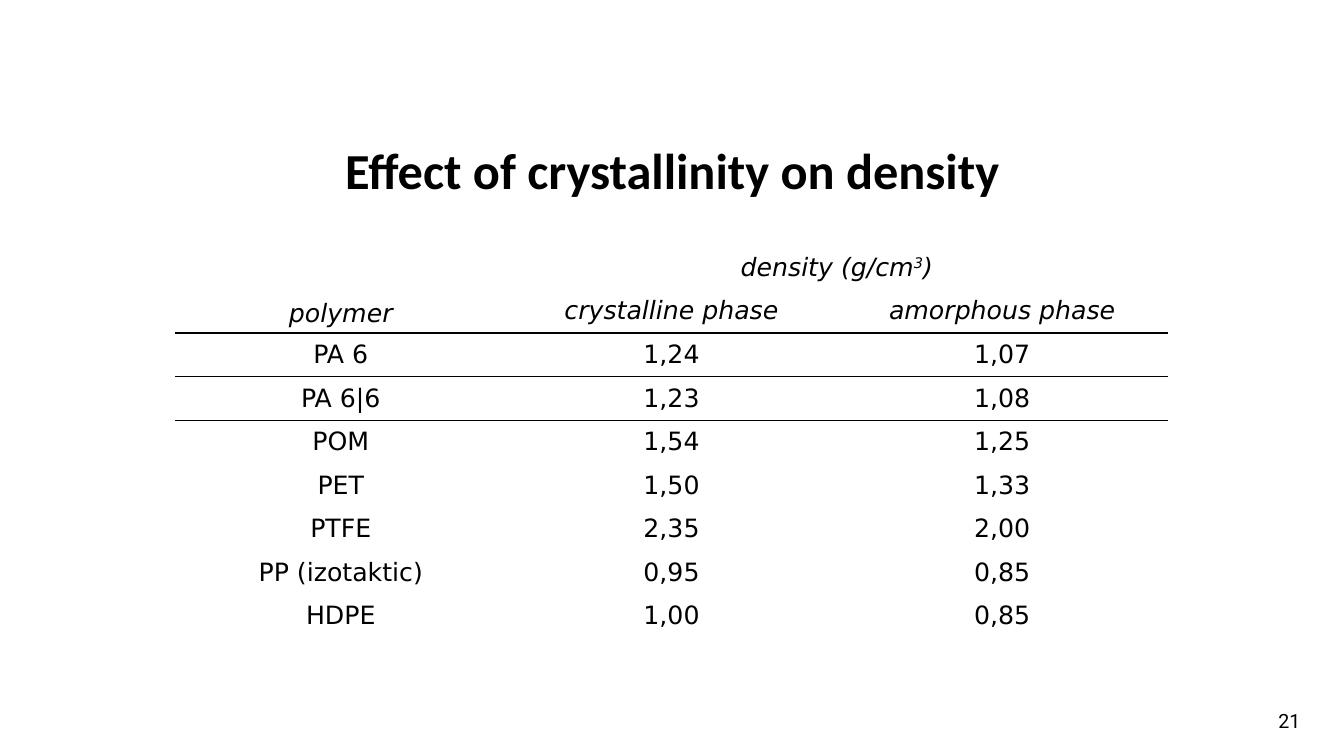
from lxml.etree import SubElement
from pptx import Presentation
from pptx.dml.color import RGBColor
from pptx.enum.text import MSO_ANCHOR as ANCHOR, PP_ALIGN as ALIGN
from pptx.oxml.ns import qn
from pptx.util import Inches, Pt

# Content
TITLE = "Effect of crystallinity on density"
PAGE = "21"
UNIT = ("density (g/cm", "3", ")")
HEADS = ("polymer", "crystalline phase", "amorphous phase")
ROWS = [
    ("PA 6", "1,24", "1,07"),
    ("PA 6|6", "1,23", "1,08"),
    ("POM", "1,54", "1,25"),
    ("PET", "1,50", "1,33"),
    ("PTFE", "2,35", "2,00"),
    ("PP (izotaktic)", "0,95", "0,85"),
    ("HDPE", "1,00", "0,85"),
]
INK, PAPER = "000000", "FFFFFF"
NO_STYLE = "{2D5ABB26-0587-4C30-8999-92F81FD0307C}"

# Grid, in inches
SLIDE_W, SLIDE_H = 13.33, 7.5
TABLE_X, TABLE_Y, COL_W, ROW_H = 1.74, 2.44, 3.28, 0.432
HEAD_ROWS = 2
N_ROWS, N_COLS = HEAD_ROWS + len(ROWS), len(HEADS)


def color(hex_code):
    return RGBColor.from_string(hex_code)


def style(p, font, size, bold=False, italic=False):
    p.alignment = ALIGN.CENTER
    f = p.font
    f.name, f.size, f.bold, f.italic = font, Pt(size), bold, italic
    f.color.rgb = color(INK)


def rule(cell, side):
    ln = SubElement(cell._tc.get_or_add_tcPr(), qn("a:" + side), w=str(Pt(1)))
    SubElement(SubElement(ln, qn("a:solidFill")), qn("a:srgbClr"), val=INK)


prs = Presentation()
prs.slide_width, prs.slide_height = Inches(SLIDE_W), Inches(SLIDE_H)
s = prs.slides.add_slide(prs.slide_layouts[5])

# Title
title = s.shapes.title
title.left, title.top, title.width, title.height = map(Inches, (0.92, 0.99, 11.5, 1.45))
tf = title.text_frame
tf.text, tf.vertical_anchor = TITLE, ANCHOR.MIDDLE
tf.paragraphs[0].line_spacing = 0.9
style(tf.paragraphs[0], "Calibri", 36, bold=True)

# Table
frame = s.shapes.add_table(N_ROWS, N_COLS, Inches(TABLE_X), Inches(TABLE_Y),
                           Inches(COL_W * N_COLS), Inches(ROW_H * N_ROWS))
table = frame.table
table.first_row = table.horz_banding = False
table._tbl.tblPr.find(qn("a:tableStyleId")).text = NO_STYLE
for row in table.rows:
    row.height = Inches(ROW_H)
for column in table.columns:
    column.width = Inches(COL_W)
table.cell(0, 0).merge(table.cell(1, 0))
table.cell(0, 1).merge(table.cell(0, 2))

texts = [(HEADS[0], UNIT, ""), ("", *HEADS[1:]), *ROWS]
for i, row in enumerate(texts):
    for j, text in enumerate(row):
        cell = table.cell(i, j)
        # Lines above and below the first polymer
        if i in (HEAD_ROWS, HEAD_ROWS + 1):
            rule(cell, "lnT")
        if i in (HEAD_ROWS - 1, HEAD_ROWS):
            rule(cell, "lnB")
        cell.fill.solid()
        cell.fill.fore_color.rgb = color(PAPER)
        cell.vertical_anchor = ANCHOR.BOTTOM if (i, j) == (0, 0) else ANCHOR.MIDDLE
        p = cell.text_frame.paragraphs[0]
        style(p, "DejaVu Sans", 18, italic=i < HEAD_ROWS)
        for part in ((text,) if isinstance(text, str) else text):
            if part:
                r = p.add_run()
                r.text = part
                if part == UNIT[1]:
                    r.font._element.set("baseline", "30000")

# Page number
box = s.shapes.add_textbox(*map(Inches, (12.51, 6.95, 0.56, 0.4)))
tf = box.text_frame
tf.word_wrap = True
tf.text, tf.vertical_anchor = PAGE, ANCHOR.MIDDLE
style(tf.paragraphs[0], "Roboto", 14)

prs.save("out.pptx")
